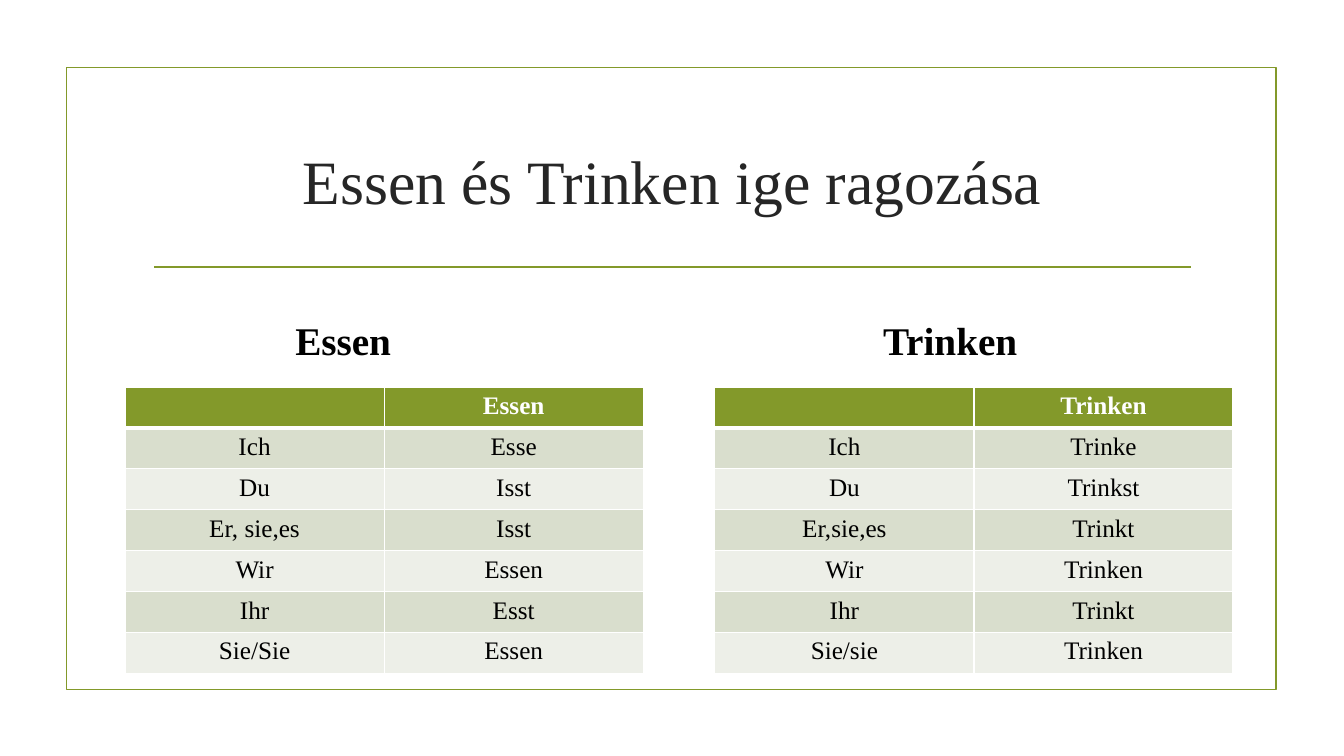
from lxml import etree
from pptx import Presentation
from pptx import util as u
from pptx.dml.color import RGBColor
from pptx.enum import shapes, text
from pptx.oxml import ns

TITLE = "Essen és Trinken ige ragozása"
VERBS = [
    {
        "heading": "Essen", "heading_box": (283, 309, 195, 57), "table_left": 124,
        "rows": [("", "Essen"), ("Ich", "Esse"), ("Du", "Isst"), ("Er, sie,es", "Isst"),
                 ("Wir", "Essen"), ("Ihr", "Esst"), ("Sie/Sie", "Essen")],
    },
    {
        "heading": "Trinken", "heading_box": (866, 309, 201, 57), "table_left": 709,
        "rows": [("", "Trinken"), ("Ich", "Trinke"), ("Du", "Trinkst"), ("Er,sie,es", "Trinkt"),
                 ("Wir", "Trinken"), ("Ihr", "Trinkt"), ("Sie/sie", "Trinken")],
    },
]

PX = 9144
FONT = "Times New Roman"
GREEN = RGBColor(0x83, 0x99, 0x2A)
SAGE = RGBColor(0xD9, 0xDE, 0xCD)
PALE = RGBColor(0xED, 0xEF, 0xE8)
INK = RGBColor(0x26, 0x26, 0x26)
BLACK = RGBColor(0, 0, 0)
WHITE = RGBColor(0xFF, 0xFF, 0xFF)
TABLE_TOP, TABLE_WIDTH, TABLE_HEIGHT = 384, 514, 284


def px(*lengths):
    return [u.Emu(length * PX) for length in lengths]


def write(frame, words, size, color=BLACK, bold=False, align=text.PP_ALIGN.CENTER):
    paragraph = frame.paragraphs[0]
    paragraph.alignment = align
    if words:
        run = paragraph.add_run()
        run.text = words
        run.font.name = FONT
        run.font.size = u.Pt(size)
        run.font.bold = bold
        run.font.color.rgb = color


def add_borders(cell, **widths):
    properties = cell._tc.get_or_add_tcPr()
    for position, side in enumerate("LRTB"):
        border = etree.Element(ns.qn(f"a:ln{side}"), w=str(u.Pt(widths.get(side, 1))))
        fill = etree.SubElement(border, ns.qn("a:solidFill"))
        etree.SubElement(fill, ns.qn("a:srgbClr"), val=str(WHITE))
        properties.insert(position, border)


def add_conjugation(slide, left, rows):
    table = slide.shapes.add_table(
        len(rows), 2, *px(left, TABLE_TOP, TABLE_WIDTH, TABLE_HEIGHT)).table
    for r, row in enumerate(rows):
        header = r == 0
        for c, words in enumerate(row):
            cell = table.cell(r, c)
            cell.fill.solid()
            cell.fill.fore_color.rgb = GREEN if header else SAGE if r % 2 else PALE
            write(cell.text_frame, words, 18, color=WHITE if header else BLACK, bold=header)
            add_borders(cell, B=3 if header else 1, T=3 if r == 1 else 1)


def main():
    deck = Presentation()
    deck.slide_width, deck.slide_height = u.Inches(13.33), u.Inches(7.5)
    slide = deck.slides.add_slide(deck.slide_layouts[5])

    title = slide.shapes.title
    title.left, title.top, title.width, title.height = px(142, 107, 1050, 143)
    title.text_frame.vertical_anchor = text.MSO_ANCHOR.MIDDLE
    write(title.text_frame, TITLE, 44, color=INK)

    border = slide.shapes.add_shape(shapes.MSO_SHAPE.RECTANGLE, *px(66, 67, 1200, 617))
    border.shadow.inherit = False
    border.fill.background()
    rule = slide.shapes.add_connector(shapes.MSO_CONNECTOR.STRAIGHT, *px(153, 265, 1181, 265))
    etree.SubElement(rule._element.spPr, ns.qn("a:effectLst"))
    for outline in (border.line, rule.line):
        outline.color.rgb = GREEN
        outline.width = u.Pt(1.25)

    for verb in VERBS:
        heading = slide.shapes.add_textbox(*px(*verb["heading_box"])).text_frame
        heading.word_wrap = True
        heading.auto_size = text.MSO_AUTO_SIZE.SHAPE_TO_FIT_TEXT
        write(heading, verb["heading"], 28, bold=True, align=text.PP_ALIGN.LEFT)
        add_conjugation(slide, verb["table_left"], verb["rows"])

    deck.save("out.pptx")


if __name__ == "__main__":
    main()
